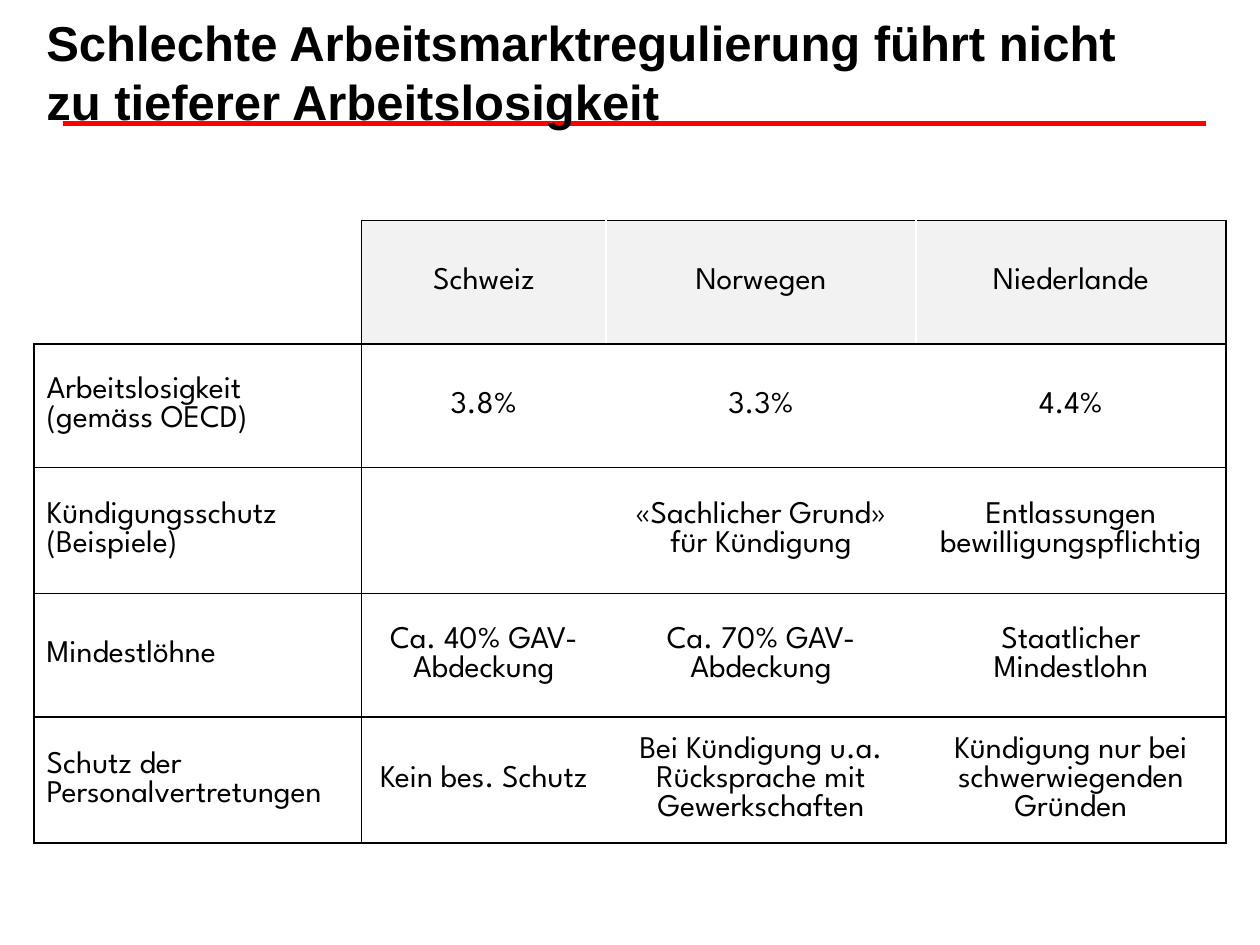
from typing import NamedTuple

from lxml import etree
from pptx import Presentation
from pptx import util as u
from pptx.dml.color import RGBColor
from pptx.enum import shapes, text
from pptx.oxml import ns

HUES = {"black": "000000", "white": "FFFFFF", "red": "FF0000", "grey": "F2F2F2"}


class Row(NamedTuple):
    high: float
    cells: tuple[str, ...]


class Col(NamedTuple):
    wide: float
    left: str
    right: str


ROWS = (
    Row(0.98, ("", "Schweiz", "Norwegen", "Niederlande")),
    Row(0.98, ("Arbeitslosigkeit (gemäss OECD)", "3.8%", "3.3%", "4.4%")),
    Row(1, ("Kündigungsschutz\n(Beispiele)", "", "«Sachlicher Grund» für Kündigung",
            "Entlassungen bewilligungspflichtig")),
    Row(0.98, ("Mindestlöhne", "Ca. 40% GAV-Abdeckung", "Ca. 70% GAV-Abdeckung",
               "Staatlicher Mindestlohn")),
    Row(1, ("Schutz der Personalvertretungen", "Kein bes. Schutz",
            "Bei Kündigung u.a. Rücksprache mit Gewerkschaften",
            "Kündigung nur bei schwerwiegenden Gründen")),
)
COLS = (
    Col(2.6, "black", "black"),
    Col(1.94, "black", "white"),
    Col(2.46, "white", "white"),
    Col(2.46, "white", "black"),
)


def tint(name: str) -> RGBColor:
    return RGBColor.from_string(HUES[name])


def style(para, face: str, size: int, bold: bool = False) -> None:
    font = para.font
    font.name, font.size, font.bold = face, u.Pt(size), bold
    font.color.rgb = tint("black")


def edge(cell, sides: dict[str, str]) -> None:
    props = cell._tc.get_or_add_tcPr()
    for side, name in sides.items():
        line = etree.SubElement(props, ns.qn(f"a:ln{side}"), w=str(u.Pt(1)))
        fill = etree.SubElement(line, ns.qn("a:solidFill"))
        etree.SubElement(fill, ns.qn("a:srgbClr"), val=HUES[name])


def fill_cell(cell, words: str, row: int, col: int) -> None:
    corner = row == col == 0
    spec = COLS[col]
    edge(cell, {
        "L": "white" if corner else spec.left,
        "R": spec.right,
        "T": "white" if corner else "black",
        "B": "black",
    })
    if row == 0 and col > 0:
        cell.fill.solid()
        cell.fill.fore_color.rgb = tint("grey")
    else:
        cell.fill.background()
    cell.text = words
    cell.vertical_anchor = text.MSO_ANCHOR.MIDDLE
    for para in cell.text_frame.paragraphs:
        para.alignment = text.PP_ALIGN.CENTER if col else text.PP_ALIGN.LEFT
        style(para, "League Spartan", 18)


def add_rule(slide) -> None:
    rule = slide.shapes.add_connector(
        shapes.MSO_CONNECTOR.STRAIGHT,
        u.Inches(0.5), u.Inches(0.98), u.Inches(9.57), u.Inches(0.98))
    rule.line.color.rgb = tint("red")
    rule.line.width = u.Pt(2.5)
    etree.SubElement(rule._element.spPr, ns.qn("a:effectLst"))


def add_title(slide) -> None:
    box = slide.shapes.add_textbox(
        u.Inches(0.27), u.Inches(0.3), u.Inches(9.23), u.Inches(0.54))
    frame = box.text_frame
    frame.word_wrap = True
    frame.margin_right = u.Inches(0.2)
    frame.vertical_anchor = text.MSO_ANCHOR.MIDDLE
    frame.text = ("Schlechte Arbeitsmarktregulierung führt nicht "
                  "zu tieferer Arbeitslosigkeit")
    style(frame.paragraphs[0], "Arial", 28, True)


def add_grid(slide) -> None:
    table = slide.shapes.add_table(
        len(ROWS), len(COLS), u.Inches(0.27), u.Inches(1.75),
        u.Inches(sum(c.wide for c in COLS)),
        u.Inches(sum(r.high for r in ROWS))).table
    table.first_row = table.horz_banding = False
    for i, col in enumerate(COLS):
        table.columns[i].width = u.Inches(col.wide)
    for i, row in enumerate(ROWS):
        table.rows[i].height = u.Inches(row.high)
        for j, words in enumerate(row.cells):
            fill_cell(table.cell(i, j), words, i, j)


def main() -> None:
    deck = Presentation()
    deck.slide_width, deck.slide_height = u.Inches(10), u.Inches(7.5)
    slide = deck.slides.add_slide(deck.slide_layouts[6])
    add_rule(slide)
    add_title(slide)
    add_grid(slide)
    deck.save("out.pptx")


if __name__ == "__main__":
    main()
